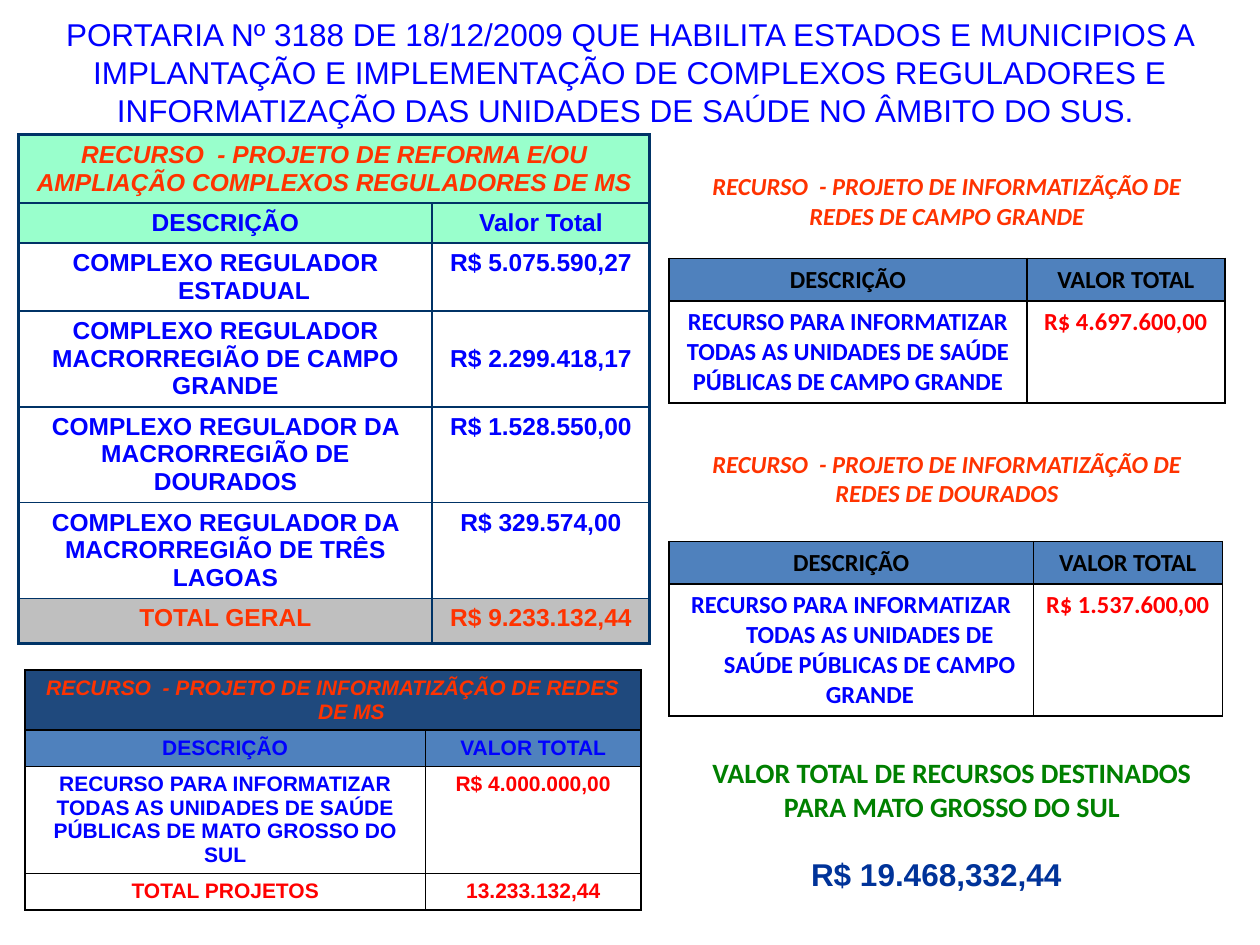
from lxml import etree
from pptx import Presentation
from pptx.dml.color import RGBColor
from pptx.enum.text import MSO_ANCHOR, MSO_AUTO_SIZE, PP_ALIGN
from pptx.oxml.ns import qn
from pptx.util import Cm, Pt

CENTER, LEFT = PP_ALIGN.CENTER, PP_ALIGN.LEFT
TOP, MIDDLE = MSO_ANCHOR.TOP, MSO_ANCHOR.MIDDLE
GROW = MSO_AUTO_SIZE.SHAPE_TO_FIT_TEXT

BLUE, RED, ORANGE, BLACK = "0000FF", "FF0000", "FF3300", "000000"
GREEN, NAVY, DEEP_BLUE = "008000", "003366", "003399"
MINT, GRAY, DARK_STEEL, STEEL = "99FFCC", "BFBFBF", "1F497D", "4F81BD"
HANG = Cm(0.75)

# text, box (left, top, width, height), font, size, color, bold, italic, alignment, wrap
HEADINGS = [
    ("PORTARIA Nº 3188 DE 18/12/2009 QUE HABILITA ESTADOS E MUNICIPIOS A "
     "IMPLANTAÇÃO E IMPLEMENTAÇÃO DE COMPLEXOS REGULADORES E "
     "INFORMATIZAÇÃO DAS UNIDADES DE SAÚDE NO ÂMBITO DO SUS. ",
     (0, 0.18, 25.4, 2.54), "Arial", 18, BLUE, False, False, CENTER, True),
    ("RECURSO  - PROJETO DE INFORMATIZÃÇÃO DE REDES DE CAMPO GRANDE",
     (13.59, 3.33, 11, 1.45), "Calibri", 14, ORANGE, True, True, CENTER, True),
    ("RECURSO  - PROJETO DE INFORMATIZÃÇÃO DE REDES DE DOURADOS",
     (13.49, 8.92, 11.2, 1.45), "Calibri", 14, ORANGE, True, True, CENTER, True),
    ("VALOR TOTAL DE RECURSOS DESTINADOS PARA MATO GROSSO DO SUL",
     (13.69, 15.11, 11, 1.63), "Calibri", 16, GREEN, True, False, CENTER, True),
    ("R$ 19.468,332,44",
     (16.1, 17.12, 5.56, 1.02), "Arial", 18, DEEP_BLUE, True, False, LEFT, False),
]

# each row: height, fill, cells of (text, color, hanging indent)
REFORMA = [
    (1.37, MINT, [("RECURSO  - PROJETO DE REFORMA E/OU AMPLIAÇÃO COMPLEXOS "
                   "REGULADORES DE MS", ORANGE, False)]),
    (0.8, MINT, [("DESCRIÇÃO", BLUE, True), ("Valor Total", BLUE, True)]),
    (1.37, None, [("COMPLEXO REGULADOR ESTADUAL", BLUE, True),
                  ("R$ 5.075.590,27", BLUE, True)]),
    (1.93, None, [("COMPLEXO REGULADOR MACRORREGIÃO DE CAMPO GRANDE", BLUE, False),
                  ("R$ 2.299.418,17", BLUE, True)]),
    (1.93, None, [("COMPLEXO REGULADOR DA MACRORREGIÃO DE DOURADOS", BLUE, False),
                  ("R$ 1.528.550,00", BLUE, True)]),
    (1.93, None, [("COMPLEXO REGULADOR DA MACRORREGIÃO DE TRÊS LAGOAS", BLUE, False),
                  ("R$ 329.574,00", BLUE, True)]),
    (0.91, GRAY, [("TOTAL GERAL", ORANGE, True), ("R$ 9.233.132,44", ORANGE, True)]),
]
REDES_MS = [
    (1.19, DARK_STEEL, [("RECURSO  - PROJETO DE INFORMATIZÃÇÃO DE REDES DE MS",
                         ORANGE, True)]),
    (0.74, STEEL, [("DESCRIÇÃO", BLUE, True), ("VALOR TOTAL", BLUE, True)]),
    (2.14, None, [("RECURSO PARA INFORMATIZAR TODAS AS UNIDADES DE SAÚDE "
                   "PÚBLICAS DE MATO GROSSO DO SUL", BLUE, False),
                  ("R$ 4.000.000,00", RED, False)]),
    (0.74, None, [("TOTAL PROJETOS", RED, True), ("13.233.132,44", RED, True)]),
]


def city_rows(total, height, hanging):
    return [
        (0.85, STEEL, [("DESCRIÇÃO", BLACK, True), ("VALOR TOTAL", BLACK, True)]),
        (height, None, [("RECURSO PARA INFORMATIZAR TODAS AS UNIDADES DE SAÚDE "
                         "PÚBLICAS DE CAMPO GRANDE", BLUE, hanging),
                        (total, RED, False)]),
    ]


# rows, left, top, column widths, font, size, border color, outer border width
TABLES = [
    (REFORMA, 0.38, 2.72, (8.33, 4.39), "Arial", 14, NAVY, 2),
    (REDES_MS, 0.5, 13.51, (8.08, 4.34), "Arial", 12, BLACK, 1),
    (city_rows("R$ 4.697.600,00", 2.03, False),
     13.49, 5.21, (7.21, 3.99), "Calibri", 14, BLACK, 1),
    (city_rows("R$ 1.537.600,00", 2.62, True),
     13.49, 10.92, (7.34, 3.81), "Calibri", 14, BLACK, 1),
]
MIDDLE_VALUE = "R$ 2.299.418,17"


def rgb(value):
    return RGBColor.from_string(value)


def style(paragraph, font_name, size, color, bold, italic, alignment=CENTER):
    paragraph.alignment = alignment
    for run in paragraph.runs:
        font = run.font
        font.name, font.size = font_name, Pt(size)
        font.bold, font.italic = bold, italic
        font.color.rgb = rgb(color)


def add_borders(cell, color, widths):
    properties = cell._tc.get_or_add_tcPr()
    for index, (side, width) in enumerate(zip("LRTB", widths)):
        line = etree.Element(qn(f"a:ln{side}"), w=str(Pt(width)))
        fill = etree.SubElement(line, qn("a:solidFill"))
        etree.SubElement(fill, qn("a:srgbClr"), val=color)
        properties.insert(index, line)


def add_heading(slide, text, box, font, size, color, bold, italic, alignment, wrap):
    frame = slide.shapes.add_textbox(*map(Cm, box)).text_frame
    frame.word_wrap = wrap
    frame.auto_size = GROW
    frame.text = text
    style(frame.paragraphs[0], font, size, color, bold, italic, alignment)


def add_resources(slide, rows, left, top, widths, font, size, border, outer):
    height = sum(row[0] for row in rows)
    table = slide.shapes.add_table(len(rows), len(widths), Cm(left), Cm(top),
                                   Cm(sum(widths)), Cm(height)).table
    table.first_row = table.horz_banding = False
    for column, width in zip(table.columns, widths):
        column.width = Cm(width)
    for r, (row_height, fill, cells) in enumerate(rows):
        table.rows[r].height = Cm(row_height)
        is_title = len(cells) == 1
        for c in range(len(widths)):
            cell = table.cell(r, c)
            add_borders(cell, border, (outer if c == 0 else 1,
                                       outer if c == 1 or is_title else 1,
                                       outer if r == 0 else 1,
                                       outer if r == len(rows) - 1 else 1))
            if fill:
                cell.fill.solid()
                cell.fill.fore_color.rgb = rgb(fill)
            else:
                cell.fill.background()
        if is_title:
            table.cell(r, 0).merge(table.cell(r, len(widths) - 1))
        for c, (text, color, hanging) in enumerate(cells):
            cell = table.cell(r, c)
            cell.text_frame.text = text
            cell.vertical_anchor = MIDDLE if text == MIDDLE_VALUE else TOP
            paragraph = cell.text_frame.paragraphs[0]
            style(paragraph, font, size, color, True, is_title)
            if hanging:
                properties = paragraph._p.get_or_add_pPr()
                properties.set("marL", str(HANG))
                properties.set("indent", str(-HANG))


def main():
    deck = Presentation()
    deck.slide_width, deck.slide_height = Cm(25.4), Cm(19.05)
    slide = deck.slides.add_slide(deck.slide_layouts[6])
    for table in TABLES:
        add_resources(slide, *table)
    for heading in HEADINGS:
        add_heading(slide, *heading)
    deck.save("out.pptx")


if __name__ == "__main__":
    main()
